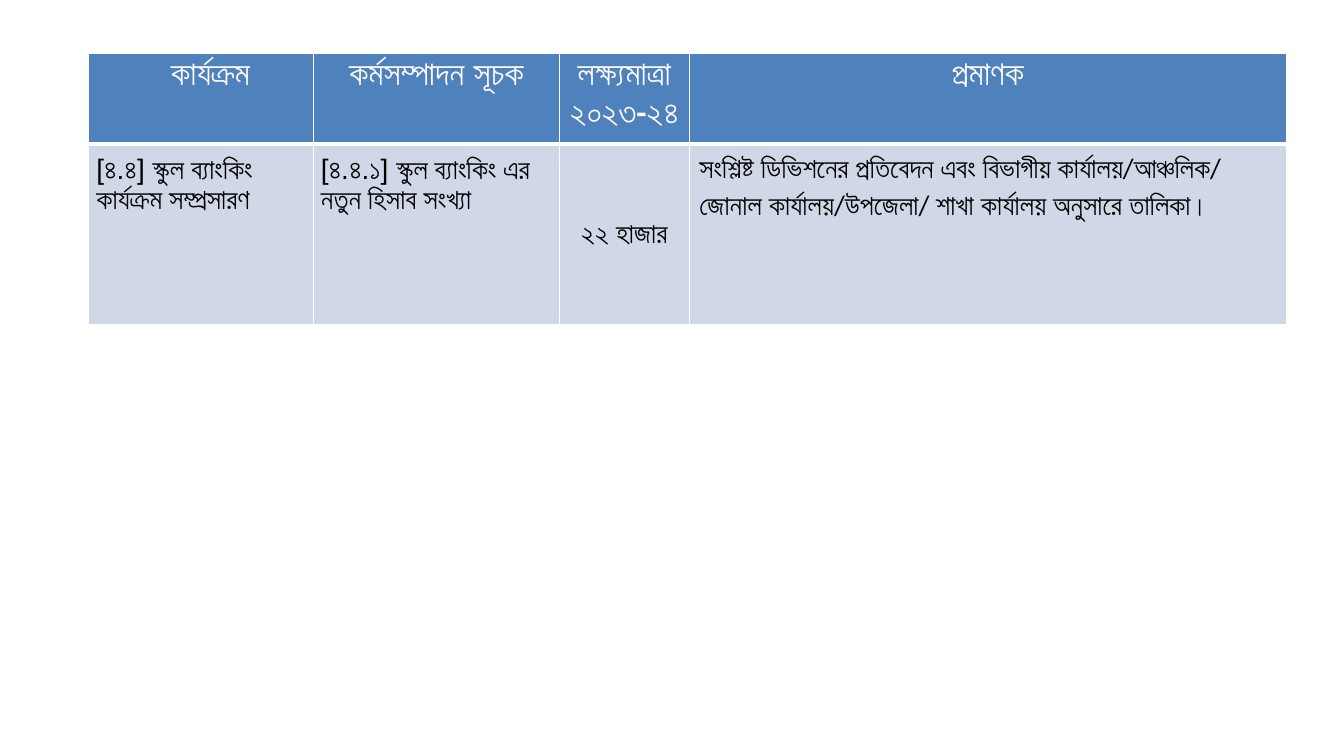
"""Build a slide with the school banking target table."""
from lxml import etree
from pptx import Presentation
from pptx.dml.color import RGBColor
from pptx.enum import text
from pptx.oxml import ns
from pptx.util import Pt

SIZE = (960, 540)
LEFT, TOP = 63.4, 38.2
COLS = [160.4, 175.7, 92.9, 426.4]
ROWS = [64.8, 128.9]
WHITE, BLACK, BLUE, PALE = "FFFFFF", "000000", "4F81BD", "D0D8E8"
WIDE, EVEN = (7.2, 3.6), (5.4, 5.4)

HEADS = ["\u00a0\u00a0কার্যক্রম".replace("\u00a0", " "), "কর্মসম্পাদন সূচক",
         "লক্ষ্যমাত্রা ২০২৩-২৪", "প্রমাণক"]
GOALS = [
    [("[৪.৪] স্কুল ব্যাংকিং কার্যক্রম সম্প্রসারণ", "Arial")],
    [("[৪.৪.১] স্কুল ব্যাংকিং এর নতুন হিসাব সংখ্যা", "Arial")],
    [("২২ হাজার", "Arial")],
    [("সংশ্লিষ্ট ডিভিশনের প্রতিবেদন এবং ", "Arial"),
     ("বিভাগীয় কার্যালয়/আঞ্চলিক/ জোনাল কার্যালয়/উপজেলা/ শাখা কার্যালয় অনুসারে ", "Calibri"),
     ("তালিকা।", "Arial")],
]


def paint(fill, tone):
    fill.solid()
    fill.fore_color.rgb = RGBColor.from_string(tone)


def edge(cell, top, base):
    props = cell._tc.get_or_add_tcPr()
    for side, width in zip("LRTB", (1, 1, top, base)):
        line = etree.SubElement(props, ns.qn(f"a:ln{side}"), w=str(Pt(width)))
        fill = etree.SubElement(line, ns.qn("a:solidFill"))
        etree.SubElement(fill, ns.qn("a:srgbClr"), val=WHITE)


def write(cell, parts, size, tone, bold, pads):
    cell.margin_left = cell.margin_right = Pt(pads[0])
    cell.margin_top = cell.margin_bottom = Pt(pads[1])
    para = cell.text_frame.paragraphs[0]
    for words, face in parts:
        run = para.add_run()
        run.text = words
        run.font.name, run.font.size, run.font.bold = face, Pt(size), bold
        paint(run.font.fill, tone)
    return para


def main():
    deck = Presentation()
    deck.slide_width, deck.slide_height = map(Pt, SIZE)
    slide = deck.slides.add_slide(deck.slide_layouts[6])
    grid = slide.shapes.add_table(len(ROWS), len(COLS), Pt(LEFT), Pt(TOP),
                                  Pt(sum(COLS)), Pt(sum(ROWS))).table
    for row, height in zip(grid.rows, ROWS):
        row.height = Pt(height)
    for col, width in enumerate(COLS):
        grid.columns[col].width = Pt(width)
        head, goal = grid.cell(0, col), grid.cell(1, col)
        edge(head, 1, 3)
        edge(goal, 3, 1)
        paint(head.fill, BLUE)
        paint(goal.fill, PALE)
        para = write(head, [(HEADS[col], "Calibri")], 24, WHITE, True, WIDE)
        para.alignment = text.PP_ALIGN.CENTER
        last = col == len(COLS) - 1
        para = write(goal, GOALS[col], 20, BLACK, False, WIDE if last else EVEN)
        para.line_spacing = 1.07
        para.space_after = Pt(0 if last else 15)
        if col == 2:
            para.alignment = text.PP_ALIGN.CENTER
            goal.vertical_anchor = text.MSO_ANCHOR.MIDDLE
    deck.save("out.pptx")


if __name__ == "__main__":
    main()
